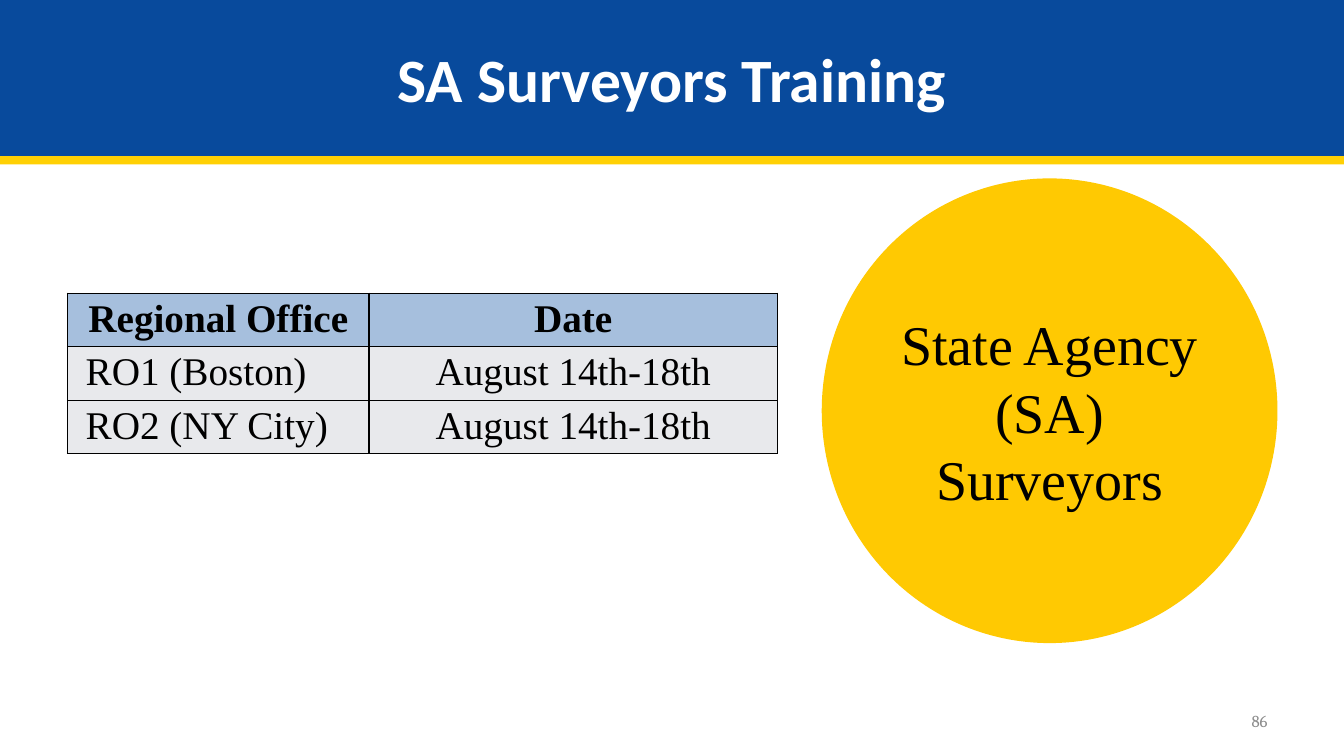
from lxml import etree
from pptx import Presentation
from pptx.dml.color import RGBColor
from pptx.enum.shapes import MSO_SHAPE
from pptx.enum.text import MSO_ANCHOR, PP_ALIGN
from pptx.oxml.ns import qn
from pptx.util import Inches, Pt

RECT = MSO_SHAPE.RECTANGLE
DISC = MSO_SHAPE.FLOWCHART_CONNECTOR
MIDDLE = MSO_ANCHOR.MIDDLE
LEFT, CENTER, RIGHT = PP_ALIGN.LEFT, PP_ALIGN.CENTER, PP_ALIGN.RIGHT
SERIF = "Times New Roman"
COLORS = {
    "blue": "084A9C", "band": "FFD004", "gold": "FFC902", "head": "A6BFDD",
    "row": "E8E9EC", "black": "000000", "white": "FFFFFF", "gray": "8C8C8C",
}
ROWS = [
    ("Regional Office", "Date"),
    ("RO1 (Boston)", "August 14th-18th"),
    ("RO2 (NY City)", "August 14th-18th"),
]


def color(name):
    return RGBColor.from_string(COLORS[name])


def paint(item, name):
    item.fill.solid()
    item.fill.fore_color.rgb = color(name)


def write(frame, text, size, font=SERIF, ink="black", bold=False, align=CENTER):
    frame.word_wrap = True
    para = frame.paragraphs[0]
    para.text = text
    para.alignment = align
    for run in para.runs:
        run.font.size = Pt(size)
        run.font.name = font
        run.font.bold = bold
        run.font.color.rgb = color(ink)


def place(shape, box):
    shape.left, shape.top, shape.width, shape.height = map(Inches, box)


def add_shape(slide, kind, box, fill):
    shape = slide.shapes.add_shape(kind, *map(Inches, box))
    shape.shadow.inherit = False
    shape.line.fill.background()
    paint(shape, fill)
    return shape


def add_header(slide, box):
    left, top, width, height = box
    add_shape(slide, RECT, (left, top + height, width, 0.08), "band")
    title = slide.shapes.title
    place(title, box)
    paint(title, "blue")
    title.text_frame.vertical_anchor = MIDDLE
    write(title.text_frame, "SA Surveyors Training", 44, "Calibri", "white", True)


def add_border(cell):
    props = cell._tc.get_or_add_tcPr()
    for index, side in enumerate(("lnL", "lnR", "lnT", "lnB")):
        line = etree.Element(qn(f"a:{side}"), w=str(Pt(1)))
        fill = etree.SubElement(line, qn("a:solidFill"))
        etree.SubElement(fill, qn("a:srgbClr"), val=COLORS["black"])
        props.insert(index, line)


def add_dates(slide, box):
    frame = slide.shapes.add_table(len(ROWS), len(ROWS[0]), *map(Inches, box))
    table = frame.table
    first = 2.99
    table.columns[0].width = Inches(first)
    table.columns[1].width = Inches(box[2] - first)
    for r, row in enumerate(ROWS):
        for c, text in enumerate(row):
            cell = table.cell(r, c)
            cell.margin_left = cell.margin_right = Inches(0.18)
            cell.margin_top = cell.margin_bottom = Inches(0.04)
            paint(cell, "row" if r else "head")
            add_border(cell)
            align = LEFT if r and not c else CENTER
            write(cell.text_frame, text, 28, bold=r == 0, align=align)


def add_group(slide, box):
    disc = add_shape(slide, DISC, box, "gold")
    disc.text_frame.vertical_anchor = MIDDLE
    write(disc.text_frame, "State Agency (SA)\vSurveyors", 40)


def add_number(slide, box):
    note = slide.shapes.add_textbox(*map(Inches, box))
    note.text_frame.vertical_anchor = MIDDLE
    write(note.text_frame, "86", 12, "Cambria", "gray", align=RIGHT)


def main():
    deck = Presentation()
    deck.slide_width, deck.slide_height = Inches(13.33), Inches(7.5)
    slide = deck.slides.add_slide(deck.slide_layouts[5])
    add_header(slide, (0, 0, 13.33, 1.55))
    add_dates(slide, (0.67, 2.91, 7.04, 1.59))
    add_group(slide, (8.15, 1.77, 4.52, 4.61))
    add_number(slide, (9.56, 6.95, 3.11, 0.4))
    deck.save("out.pptx")


if __name__ == "__main__":
    main()
